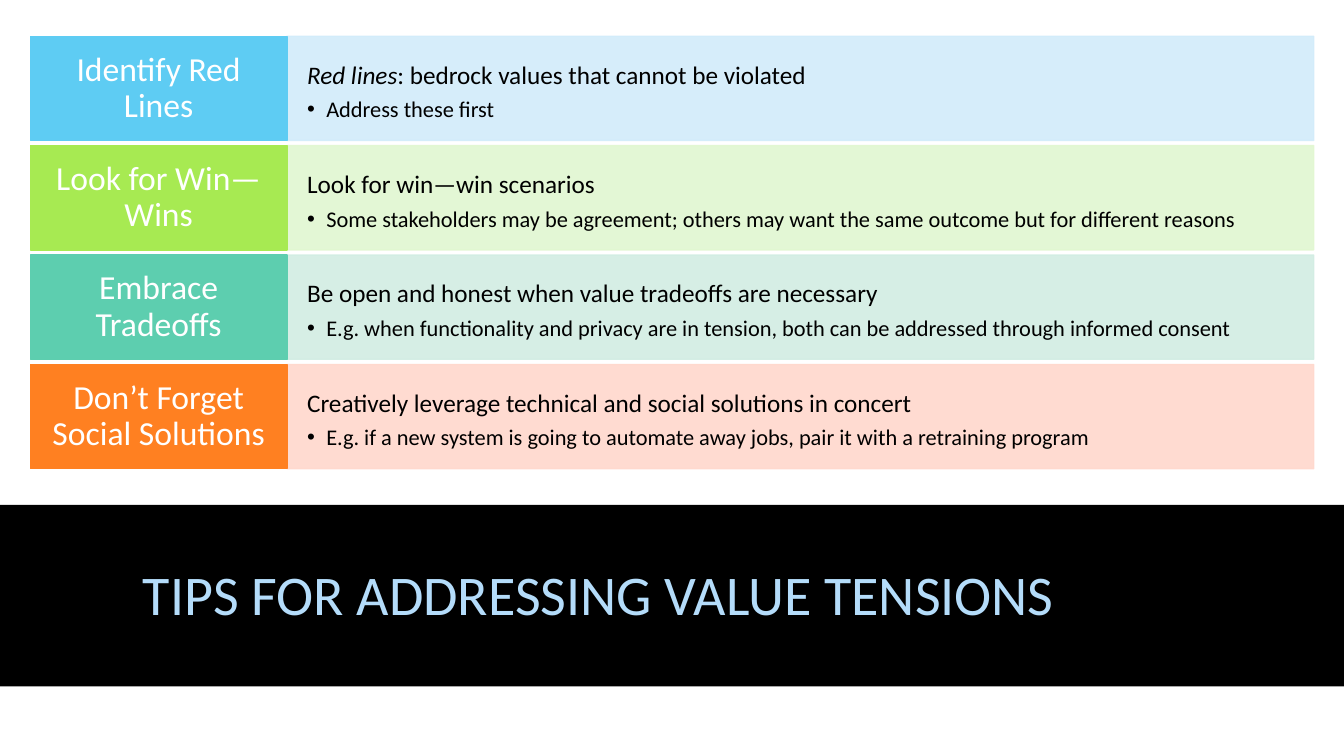
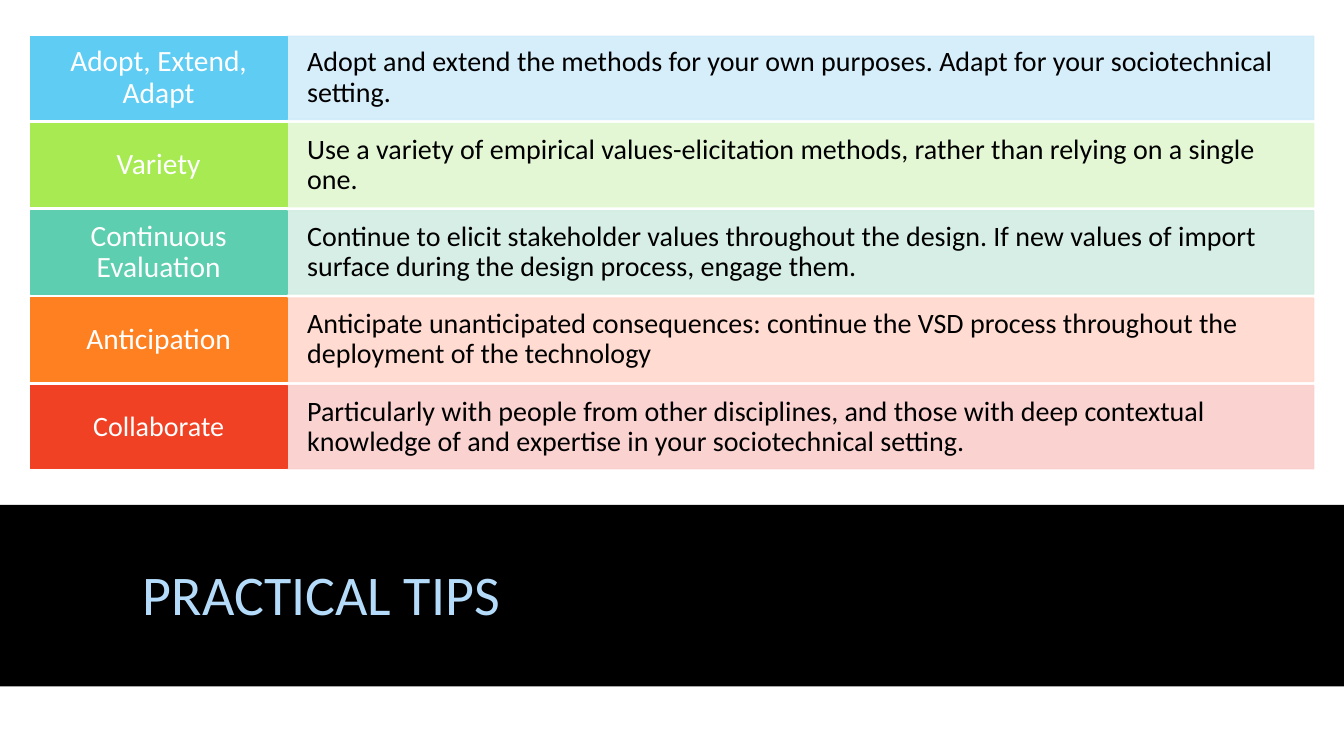
from lxml import etree
from pptx import Presentation
from pptx import util as u
from pptx.dml.color import RGBColor
from pptx.enum import shapes, text
from pptx.oxml.ns import qn

BLACK = RGBColor(0, 0, 0)
WHITE = RGBColor(255, 255, 255)
TITLE_BLUE = RGBColor(0xB4, 0xDC, 0xFA)
ROW_COLOURS = [
    (RGBColor(0x5E, 0xCC, 0xF3), RGBColor(0xD2, 0xEC, 0xFA)),
    (RGBColor(0xA7, 0xEA, 0x52), RGBColor(0xE1, 0xF7, 0xD1)),
    (RGBColor(0x5D, 0xCE, 0xAF), RGBColor(0xD2, 0xED, 0xE3)),
    (RGBColor(0xFF, 0x80, 0x21), RGBColor(0xFF, 0xD8, 0xCD)),
    (RGBColor(0xF1, 0x41, 0x24), RGBColor(0xFA, 0xCF, 0xCD)),
]
FONT = "Calibri"

SLIDES = [
    {
        "title": "TIPS FOR ADDRESSING VALUE TENSIONS",
        "sizes": {"label": 24, "lead": 18, "bullet": 16},
        "anchor": text.MSO_ANCHOR.TOP,
        "rows": [
            ("Identify Red Lines",
             [("Red lines", True), (": bedrock values that cannot be violated", False)],
             "Address these first"),
            ("Look for Win—Wins",
             [("Look for win—win scenarios", False)],
             "Some stakeholders may be agreement; others may want the same outcome but for different reasons"),
            ("Embrace Tradeoffs",
             [("Be open and honest when value tradeoffs are necessary", False)],
             "E.g. when functionality and privacy are in tension, both can be addressed through informed consent"),
            ("Don’t Forget Social Solutions",
             [("Creatively leverage technical and social solutions in concert", False)],
             "E.g. if a new system is going to automate away jobs, pair it with a retraining program"),
        ],
    },
    {
        "title": "PRACTICAL TIPS",
        "sizes": {"label": 21, "lead": 20, "Collaborate": 20},
        "anchor": text.MSO_ANCHOR.MIDDLE,
        "rows": [
            ("Adopt, Extend, Adapt",
             [("Adopt and extend the methods for your own purposes. Adapt for your sociotechnical setting.", False)],
             None),
            ("Variety",
             [("Use a variety of empirical values-elicitation methods, rather than relying on a single one.", False)],
             None),
            ("Continuous Evaluation",
             [("Continue to elicit stakeholder values throughout the design. If new values of import surface "
               "during the design process, engage them.", False)],
             None),
            ("Anticipation",
             [("Anticipate unanticipated consequences: continue the VSD process throughout the deployment "
               "of the technology", False)],
             None),
            ("Collaborate",
             [("Particularly with people from other disciplines, and those with deep contextual knowledge of "
               "and expertise in your sociotechnical setting.", False)],
             None),
        ],
    },
]

WIDTH, HEIGHT = 13.33, 7.5
BAND = (0, 5.01, WIDTH, 1.8)
TITLE = (1.32, 5.11, 10.7, 1.65)
LEFT, TOP, LIST_WIDTH, LIST_HEIGHT = 0.3, 0.36, 12.73, 4.29
LABEL_SHARE, GAP_SHARE = 0.2, 0.05
INDENT = 0.19


def set_all(target, values):
    for name, value in values.items():
        setattr(target, name, value)


def box(slide, place, colour, opacity=100, outlined=True):
    rect = slide.shapes.add_shape(shapes.MSO_SHAPE.RECTANGLE, *map(u.Inches, place))
    rect.shadow.inherit = False
    rect.fill.solid()
    rect.fill.fore_color.rgb = colour
    if outlined:
        set_all(rect.line, {"width": u.Pt(1)})
        rect.line.color.rgb = colour
    else:
        rect.line.fill.background()
    if opacity < 100:
        for tint in rect.element.spPr.iter(qn("a:srgbClr")):
            etree.SubElement(tint, qn("a:alpha"), val=str(opacity * 1000))
    return rect


def set_frame(holder, anchor, across, down):
    frame = holder.text_frame
    set_all(frame, {
        "word_wrap": True, "vertical_anchor": anchor,
        "margin_left": u.Inches(across), "margin_right": u.Inches(across),
        "margin_top": u.Inches(down), "margin_bottom": u.Inches(down),
    })
    return frame


def write(paragraph, runs, size, colour, align=text.PP_ALIGN.LEFT, spacing=0.9):
    set_all(paragraph, {"alignment": align, "line_spacing": spacing})
    for words, italic in runs:
        run = paragraph.add_run()
        run.text = words
        set_all(run.font, {"name": FONT, "size": u.Pt(size), "italic": italic})
        run.font.color.rgb = colour


def add_bullet(paragraph):
    props = paragraph._p.get_or_add_pPr()
    props.set("marL", str(u.Inches(INDENT)))
    props.set("indent", str(-u.Inches(INDENT)))
    etree.SubElement(props, qn("a:buFont"), typeface="Arial")
    etree.SubElement(props, qn("a:buChar"), char="•")


def add_row(slide, row, colours, top, height, sizes, anchor):
    label, lead, bullet = row
    strong, pale = colours
    label_width = LIST_WIDTH * LABEL_SHARE
    panel = box(slide, (LEFT + label_width, top, LIST_WIDTH - label_width, height), pale, 90)
    frame = set_frame(panel, anchor, 0.2, height / 4)
    write(frame.paragraphs[0], lead, sizes["lead"], BLACK)
    if bullet:
        frame.paragraphs[0].space_after = u.Pt(sizes["lead"] * 0.35)
        detail = frame.add_paragraph()
        write(detail, [(bullet, False)], sizes["bullet"], BLACK)
        add_bullet(detail)
    tag = box(slide, (LEFT, top, label_width, height), strong)
    frame = set_frame(tag, text.MSO_ANCHOR.MIDDLE, 0.13, height / 10)
    write(frame.paragraphs[0], [(label, False)], sizes.get(label, sizes["label"]), WHITE,
          text.PP_ALIGN.CENTER)


def add_title(slide, title):
    box(slide, BAND, BLACK, outlined=False)
    heading = slide.shapes.add_textbox(*map(u.Inches, TITLE))
    frame = set_frame(heading, text.MSO_ANCHOR.MIDDLE, 0.1, 0.05)
    write(frame.paragraphs[0], [(title, False)], 40, TITLE_BLUE, spacing=0.85)


def main():
    deck = Presentation()
    set_all(deck, {"slide_width": u.Inches(WIDTH), "slide_height": u.Inches(HEIGHT)})
    for content in SLIDES:
        slide = deck.slides.add_slide(deck.slide_layouts[6])
        add_title(slide, content["title"])
        count = len(content["rows"])
        height = LIST_HEIGHT / (count + GAP_SHARE * (count - 1))
        for index, (row, colours) in enumerate(zip(content["rows"], ROW_COLOURS)):
            top = TOP + index * height * (1 + GAP_SHARE)
            add_row(slide, row, colours, top, height, content["sizes"], content["anchor"])
    deck.save("out.pptx")


if __name__ == "__main__":
    main()
